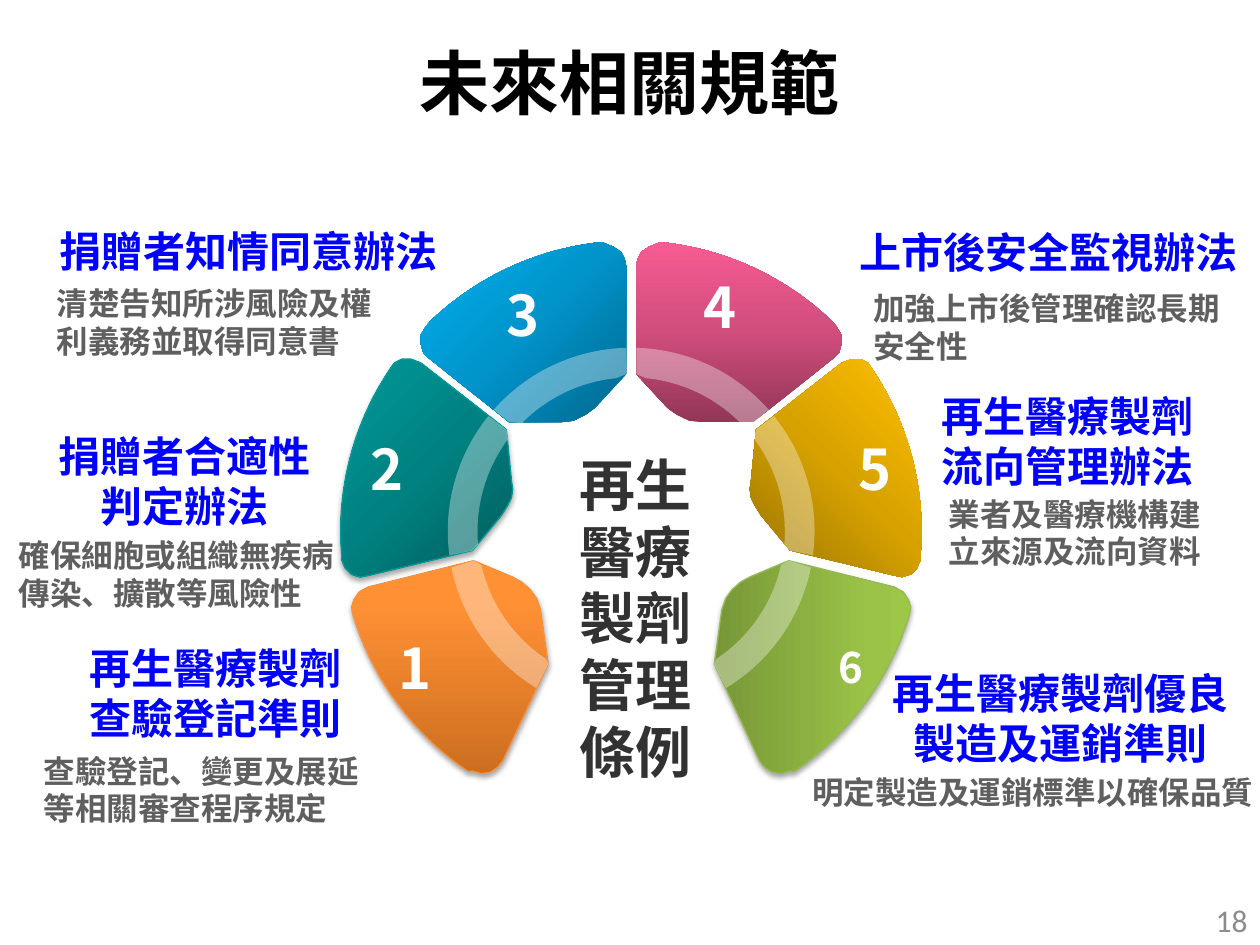
from math import cos, radians, sin

from lxml.etree import SubElement
from pptx import Presentation
from pptx.dml.color import RGBColor
from pptx.enum.text import MSO_ANCHOR, PP_ALIGN
from pptx.oxml.ns import qn
from pptx.util import Pt

CJK = "Noto Sans CJK SC"
LEFT, CENTER, RIGHT = PP_ALIGN.LEFT, PP_ALIGN.CENTER, PP_ALIGN.RIGHT
TOP, MIDDLE = MSO_ANCHOR.TOP, MSO_ANCHOR.MIDDLE

# The wheel: angles run from the top towards the left; the right half is mirrored.
CENTER_X, CENTER_Y = 360.7, 303.5
RIM, BAND_OUTER, BAND_INNER = 166, 104.8, 87.8

# Left petals: rim angles, then the remaining corners.
OUTLINES = {
    "top": ((43.4, 5.8), [
        (350.6, 141.1), (355, 144), (357.1, 148.3), (357.8, 151.9), (357.8, 213.8),
        (339.8, 233.3), (334.8, 236.9), (327.6, 240.5), (321.1, 241.2), (290.9, 241.2),
        (244.8, 204.5), (241.9, 201.6), (240.5, 196.6), (240.5, 191.5), (243.4, 186.5)]),
    "side": ((95, 55.9), [
        (225.4, 207.4), (229.7, 205.2), (234.7, 205.2), (240.5, 207.4), (289.4, 245.5),
        (292.3, 275), (293, 279.4), (292.3, 284.4), (290.2, 288.7), (286.6, 294.5),
        (270, 314.6), (210.2, 329), (205.9, 329.8), (200.9, 328.3), (197.3, 324.7),
        (195.1, 319.7)]),
    "bottom": ((145.9, 106.6), [
        (200.9, 347), (202.3, 342.7), (205.2, 338.4), (210.2, 335.5), (270.7, 320.4),
        (293, 329.8), (298.1, 332.6), (303.1, 337), (306.7, 342), (308.9, 348.5),
        (313.2, 379.4), (287.3, 434.9), (284.4, 438.5), (280.1, 441.4), (275, 442.1),
        (270, 440.6)]),
}
# Band pieces: outer angles, corners, inner angles, corners.
BANDS = [
    ((1.6, 48.6), [(290.9, 241.2)], (45.3, 5.6), [(357.8, 213.8)]),
    ((51.2, 97.6), [(270, 314.6)], (95, 53.3), [(289.4, 245.5)]),
    ((101.5, 148.8), [(313.2, 379.4)], (146.3, 102.8), [(270.7, 320.4)]),
]
# Number, outline, mirrored, gradient stops, direction, border, text format.
PETALS = [
    ("3", "top", False, [(0, "00688E"), (50, "0094CA"), (100, "00B0F0")], 225, None,
     dict(align=CENTER, insets=(5, 22, 5, 3))),
    ("1", "bottom", False, [(0, "CC6E20"), (80, "FF9034"), (100, "FF9136")], 270, "F69240",
     dict(anchor=MIDDLE, insets=(27, 3, 5, 3))),
    ("4", "top", True, [(0, "923657"), (50, "D04D7C"), (100, "F75B93")], 270, None,
     dict(align=CENTER, anchor=MIDDLE, insets=(5, 3, 27, 32))),
    ("2", "side", False, [(0, "005B5B"), (50, "008181"), (100, "009999")], 225, "009999",
     dict(anchor=MIDDLE, insets=(17, 3, 5, 3))),
    ("5", "side", True, [(0, "977200"), (50, "D7A200"), (100, "FFC000")], 315, None,
     dict(align=RIGHT, anchor=MIDDLE, insets=(5, 3, 17, 3))),
    ("6", "bottom", True, [(0, "779737"), (80, "9BC348"), (100, "9DC746")], 0, "98B955",
     dict(align=RIGHT, anchor=MIDDLE, insets=(5, 3, 27, 3), size=24)),
]
HEADINGS = [
    ("再生醫療製劑\n查驗登記準則", (43.2, 363.6, 160, 65.5)),
    ("捐贈者合適性\n判定辦法", (25.2, 242.6, 160, 65.5)),
    ("捐贈者知情同意辦法", (25.9, 125.3, 232.6, 36)),
    ("上市後安全監視辦法", (483.1, 126, 232.6, 36)),
    ("再生醫療製劑\n流向管理辦法", (530, 219.6, 160, 65.5)),
    ("再生醫療製劑優良\n製造及運銷準則", (501.8, 378, 208, 65.5)),
]
DETAILS = [
    ("查驗登記、變更及展延等相關審查程序規定", (18, 426.2, 211, 51)),
    ("確保細胞或組織無疾病傳染、擴散等風險性", (3.6, 303.1, 197.3, 51)),
    ("清楚告知所涉風險及權利義務並取得同意書", (25.2, 159.1, 203, 51)),
    ("加強上市後管理確認長期\n安全性", (491.8, 162, 214.6, 51)),
    ("業者及醫療機構建立來源及流向資料", (535, 279.4, 161.3, 51)),
    ("明定製造及運銷標準以確保品質", (457.2, 438.5, 273.6, 29)),
]


def rgb(value):
    return RGBColor.from_string(value)


def add_shadow(parent):
    effects = SubElement(parent, qn("a:effectLst"))
    shadow = SubElement(effects, qn("a:outerShdw"), blurRad=str(Pt(3.1)),
                        dist=str(Pt(1.8)), dir="5400000", rotWithShape="0")
    black = SubElement(shadow, qn("a:srgbClr"), val="000000")
    SubElement(black, qn("a:alpha"), val="35000")


def write_text(box, text, size=32, color="FFFFFF", bold=True, font=CJK, align=LEFT,
               anchor=TOP, insets=(7.2, 3.6, 7.2, 3.6), wrap=True, shadow=False):
    frame = box.text_frame
    frame.word_wrap = wrap
    frame.vertical_anchor = anchor
    (frame.margin_left, frame.margin_top,
     frame.margin_right, frame.margin_bottom) = map(Pt, insets)
    for index, line in enumerate(text.split("\n")):
        para = frame.paragraphs[0] if index == 0 else frame.add_paragraph()
        para.alignment = align
        if font == CJK:
            para.line_spacing = Pt(round(size * 1.19, 1))
        span = para.add_run()
        span.text = line
        span.font.size, span.font.bold = Pt(size), bold
        span.font.color.rgb = rgb(color)
        properties = span.font._element if hasattr(span.font, "_element") else span._r.get_or_add_rPr()
        if shadow:
            add_shadow(properties)
        span.font.name = font
        SubElement(properties, qn("a:ea"), typeface=font)


def add_text(page, text, place, **text_format):
    write_text(page.shapes.add_textbox(*map(Pt, place)), text, **text_format)


def arc(radius, angles, steps=24):
    start, end = angles
    turns = [radians(start + (end - start) * step / steps) for step in range(steps + 1)]
    return [(CENTER_X - radius * sin(turn), CENTER_Y - radius * cos(turn)) for turn in turns]


def add_outline(page, points, mirrored):
    if mirrored:
        points = [(2 * CENTER_X - x, y) for x, y in points]
    points = [(Pt(x), Pt(y)) for x, y in points]
    builder = page.shapes.build_freeform(*points[0])
    builder.add_line_segments(points[1:], close=True)
    shape = builder.convert_to_shape()
    shape.shadow.inherit = False
    shape.line.fill.background()
    return shape


def fill_gradient(shape, stops, direction):
    shape.fill.gradient()
    shape.fill.gradient_angle = -direction % 360
    stop_list = shape._element.spPr.find(".//" + qn("a:gsLst"))
    for stop in list(stop_list):
        stop_list.remove(stop)
    for position, color in stops:
        stop = SubElement(stop_list, qn("a:gs"), pos=str(position * 1000))
        SubElement(stop, qn("a:srgbClr"), val=color)


def add_petal(page, number, outline, mirrored, stops, direction, border, text_format):
    angles, corners = OUTLINES[outline]
    petal = add_outline(page, arc(RIM, angles) + corners, mirrored)
    fill_gradient(petal, stops, direction)
    if border:
        petal.line.color.rgb = rgb(border)
        petal.line.width = Pt(0.75)
        properties = petal._element.spPr
        properties.remove(properties.find(qn("a:effectLst")))
        add_shadow(properties)
    write_text(petal, number, **text_format)


def add_band(page, outer, outer_corners, inner, inner_corners, mirrored):
    points = arc(BAND_OUTER, outer) + outer_corners + arc(BAND_INNER, inner) + inner_corners
    band = add_outline(page, points, mirrored)
    band.fill.solid()
    band.fill.fore_color.rgb = rgb("FFFFFF")
    white = band._element.spPr.find(".//" + qn("a:srgbClr"))
    SubElement(white, qn("a:alpha"), val="35000")


def main():
    deck = Presentation()
    deck.slide_width, deck.slide_height = Pt(720), Pt(540)
    page = deck.slides.add_slide(deck.slide_layouts[6])
    add_text(page, "未來相關規範", (33.1, 19.4, 653, 45.4), size=40, color="000000", align=CENTER)
    for petal in PETALS:
        add_petal(page, *petal)
    for band in BANDS:
        for mirrored in (False, True):
            add_band(page, *band, mirrored)
    for text, place in HEADINGS:
        add_text(page, text, place, size=24, color="0000FF", align=CENTER, wrap=False)
    add_text(page, "再生醫療製劑管理條例", (321.8, 264.2, 82.8, 177.8), color="323232",
             align=CENTER, anchor=MIDDLE, shadow=True)
    for text, place in DETAILS:
        add_text(page, text, place, size=18, color="5F5F5F")
    add_text(page, "18", (552.2, 511.2, 167.8, 28.8), size=18, color="8C8C8C", bold=False,
             font="Calibri", align=RIGHT, anchor=MIDDLE)
    deck.save("out.pptx")


if __name__ == "__main__":
    main()
